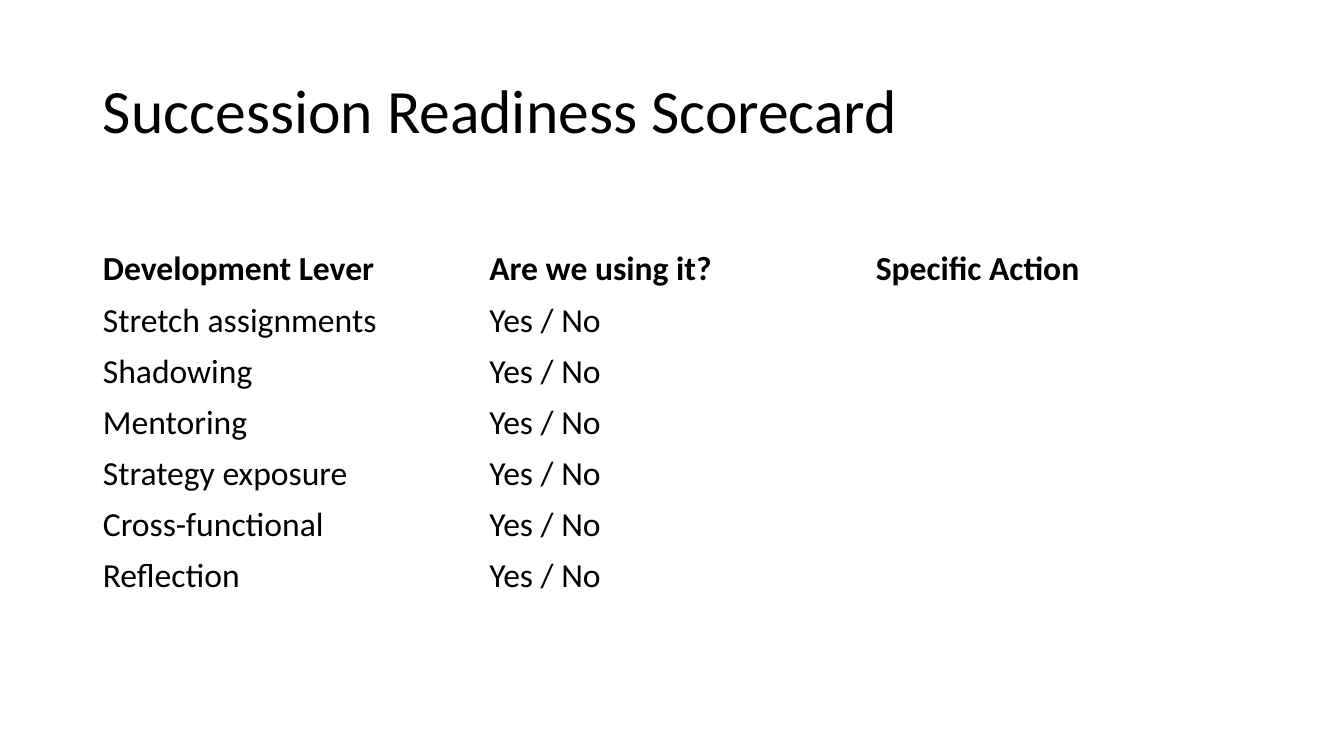
from dataclasses import dataclass

from pptx import Presentation
from pptx import util as u
from pptx.dml.color import RGBColor
from pptx.enum import text

PX = 9144  # EMU per px, 100 px to the inch
BLACK = RGBColor(0, 0, 0)
FACE = "Calibri"
LEFT, WIDTH = 92, 1150


@dataclass(frozen=True)
class Row:
    lever: str
    used: str = "Yes / No"
    action: str = ""
    bold: bool = False


ROWS = [
    Row("Development Lever", "Are we using it?", "Specific Action", True),
    Row("Stretch assignments"),
    Row("Shadowing"),
    Row("Mentoring"),
    Row("Strategy exposure"),
    Row("Cross-functional"),
    Row("Reflection"),
]


def px(size: int) -> u.Emu:
    return u.Emu(size * PX)


def style(par, size: int, bold: bool = False) -> None:
    par.alignment = text.PP_ALIGN.LEFT
    par.font.color.rgb = BLACK
    look = {"name": FACE, "size": u.Pt(size), "bold": bold}
    for key, value in look.items():
        setattr(par.font, key, value)


def add_title(slide, words: str) -> None:
    title = slide.shapes.title
    place = {"left": px(LEFT), "top": px(40), "width": px(WIDTH), "height": px(145)}
    for key, value in place.items():
        setattr(title, key, value)
    frame = title.text_frame
    frame.text = words
    frame.auto_size = text.MSO_AUTO_SIZE.NONE
    frame.vertical_anchor = text.MSO_ANCHOR.MIDDLE
    par = frame.paragraphs[0]
    par.line_spacing = 0.9
    style(par, 44)


def add_grid(slide, rows: list[Row]) -> None:
    grid = slide.shapes.add_table(
        len(rows), 3, px(LEFT), px(242), px(WIDTH), px(50 * len(rows))
    ).table
    grid.horz_banding = False
    for line, row in zip(grid.rows, rows):
        for cell, words in zip(line.cells, (row.lever, row.used, row.action)):
            cell.fill.background()
            cell.vertical_anchor = text.MSO_ANCHOR.MIDDLE
            cell.text = words
            style(cell.text_frame.paragraphs[0], 24, row.bold)


def main() -> None:
    deck = Presentation()
    deck.slide_width, deck.slide_height = px(1333), px(750)
    slide = deck.slides.add_slide(deck.slide_layouts[5])
    add_title(slide, "Succession Readiness Scorecard")
    add_grid(slide, ROWS)
    deck.save("out.pptx")


if __name__ == "__main__":
    main()
